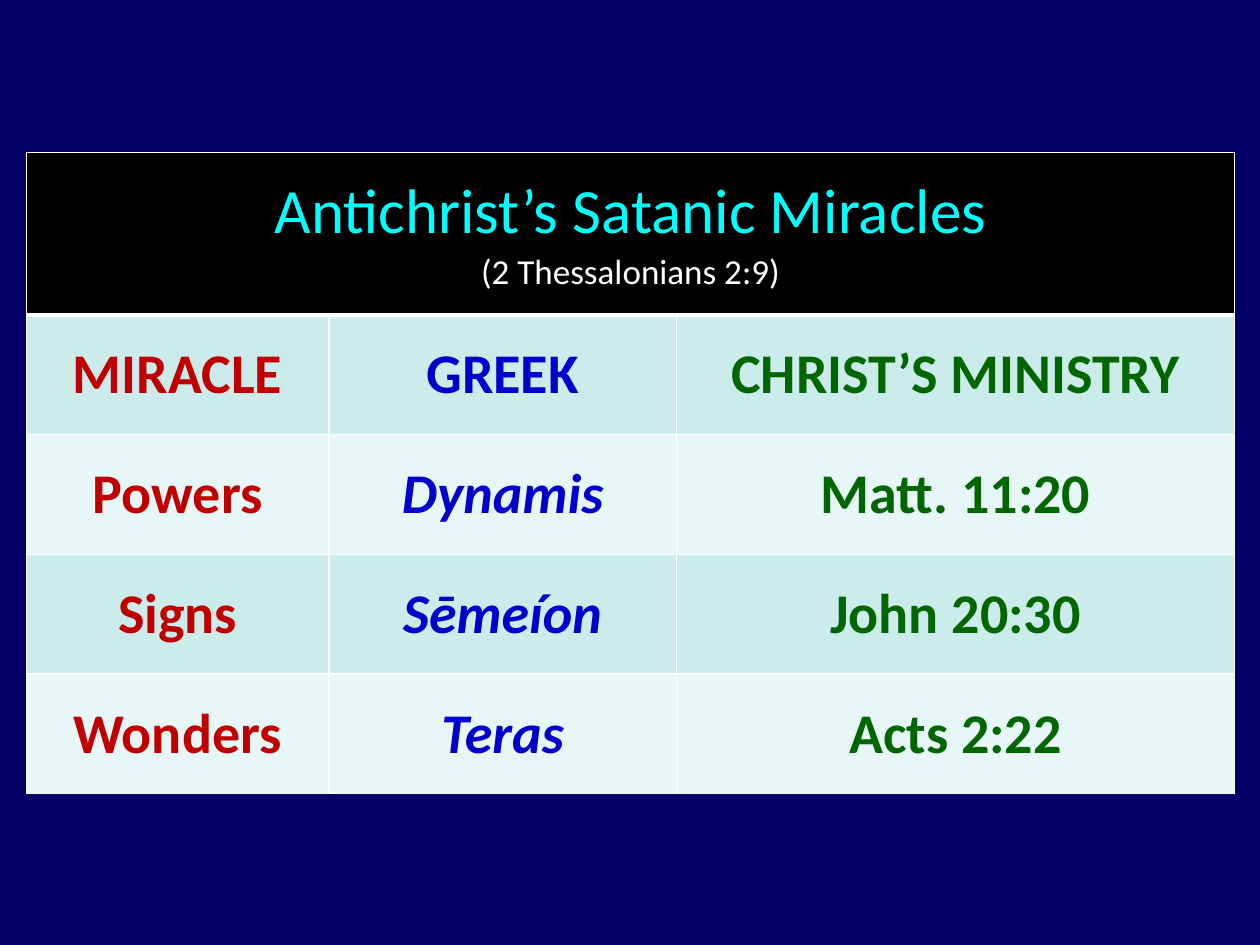
from dataclasses import dataclass

from lxml.etree import SubElement
from pptx import Presentation
from pptx.dml.color import RGBColor
from pptx.enum.text import MSO_ANCHOR, PP_ALIGN
from pptx.oxml.ns import qn
from pptx.util import Inches, Pt


@dataclass(frozen=True)
class Theme:
    font: str = "Calibri"
    background: str = "000066"
    heading_fill: str = "000000"
    heading: str = "00FFFF"
    line: str = "FFFFFF"
    bands: tuple = ("CCECEC", "E7F6F6")
    columns: tuple = ("C00000", "0000CC", "006600")
    heading_size: int = 36
    reference_size: int = 20
    body_size: int = 32


class SlideBuilder:
    """Holds the theme and the current slide."""

    def __init__(self, deck, theme):
        self.theme = theme
        self.page = deck.slides.add_slide(deck.slide_layouts[6])
        fill = self.page.background.fill
        fill.solid()
        fill.fore_color.rgb = RGBColor.from_string(theme.background)

    def table(self, left, top, widths, heights):
        frame = self.page.shapes.add_table(
            len(heights), len(widths), Inches(left), Inches(top),
            Inches(sum(widths)), Inches(sum(heights)))
        table = frame.table
        for column, width in zip(table.columns, widths):
            column.width = Inches(width)
        for row, height in zip(table.rows, heights):
            row.height = Inches(height)
        return table

    def style_cell(self, cell, color, top=1, bottom=1):
        cell.vertical_anchor = MSO_ANCHOR.MIDDLE
        cell.margin_left = cell.margin_right = Inches(0.07)
        cell.margin_top = cell.margin_bottom = Inches(0.04)
        # Borders come before the fill in the cell properties
        properties = cell._tc.get_or_add_tcPr()
        for side, width in (("L", 1), ("R", 1), ("T", top), ("B", bottom)):
            border = SubElement(properties, qn(f"a:ln{side}"), w=str(Pt(width)))
            solid = SubElement(border, qn("a:solidFill"))
            SubElement(solid, qn("a:srgbClr"), val=self.theme.line)
        cell.fill.solid()
        cell.fill.fore_color.rgb = RGBColor.from_string(color)

    def add_text(self, para, text, size, color, bold=False, italic=False):
        para.alignment = PP_ALIGN.CENTER
        span = para.add_run()
        span.text = text
        span.font.name = self.theme.font
        span.font.size = Pt(size)
        span.font.bold = bold
        span.font.italic = italic
        span.font.color.rgb = RGBColor.from_string(color)


def main():
    theme = Theme()
    deck = Presentation()
    deck.slide_width, deck.slide_height = Inches(10), Inches(7.5)
    builder = SlideBuilder(deck, theme)

    rows = [
        ("MIRACLE", "GREEK", "CHRIST’S MINISTRY"),
        ("Powers", "Dynamis", "Matt. 11:20"),
        ("Signs", "Sēmeíon", "John 20:30"),
        ("Wonders", "Teras", "Acts 2:22"),
    ]
    table = builder.table(0.21, 1.21, (2.4, 2.76, 4.43), [1.29] + [0.95] * len(rows))

    # Heading across all columns
    for cell in table.rows[0].cells:
        builder.style_cell(cell, theme.heading_fill, bottom=3)
    heading = table.cell(0, 0)
    heading.merge(table.cell(0, 2))
    box = heading.text_frame
    builder.add_text(box.paragraphs[0], "Antichrist’s Satanic Miracles",
                     theme.heading_size, theme.heading)
    builder.add_text(box.add_paragraph(), "(2 Thessalonians 2:9)",
                     theme.reference_size, theme.line)

    # Column labels and banded body; Greek words are italic
    for index, texts in enumerate(rows):
        for column, (text, color) in enumerate(zip(texts, theme.columns)):
            cell = table.cell(index + 1, column)
            builder.style_cell(cell, theme.bands[index % 2], top=1 if index else 3)
            builder.add_text(cell.text_frame.paragraphs[0], text, theme.body_size,
                             color, bold=True, italic=index > 0 and column == 1)

    deck.save("out.pptx")


if __name__ == "__main__":
    main()
